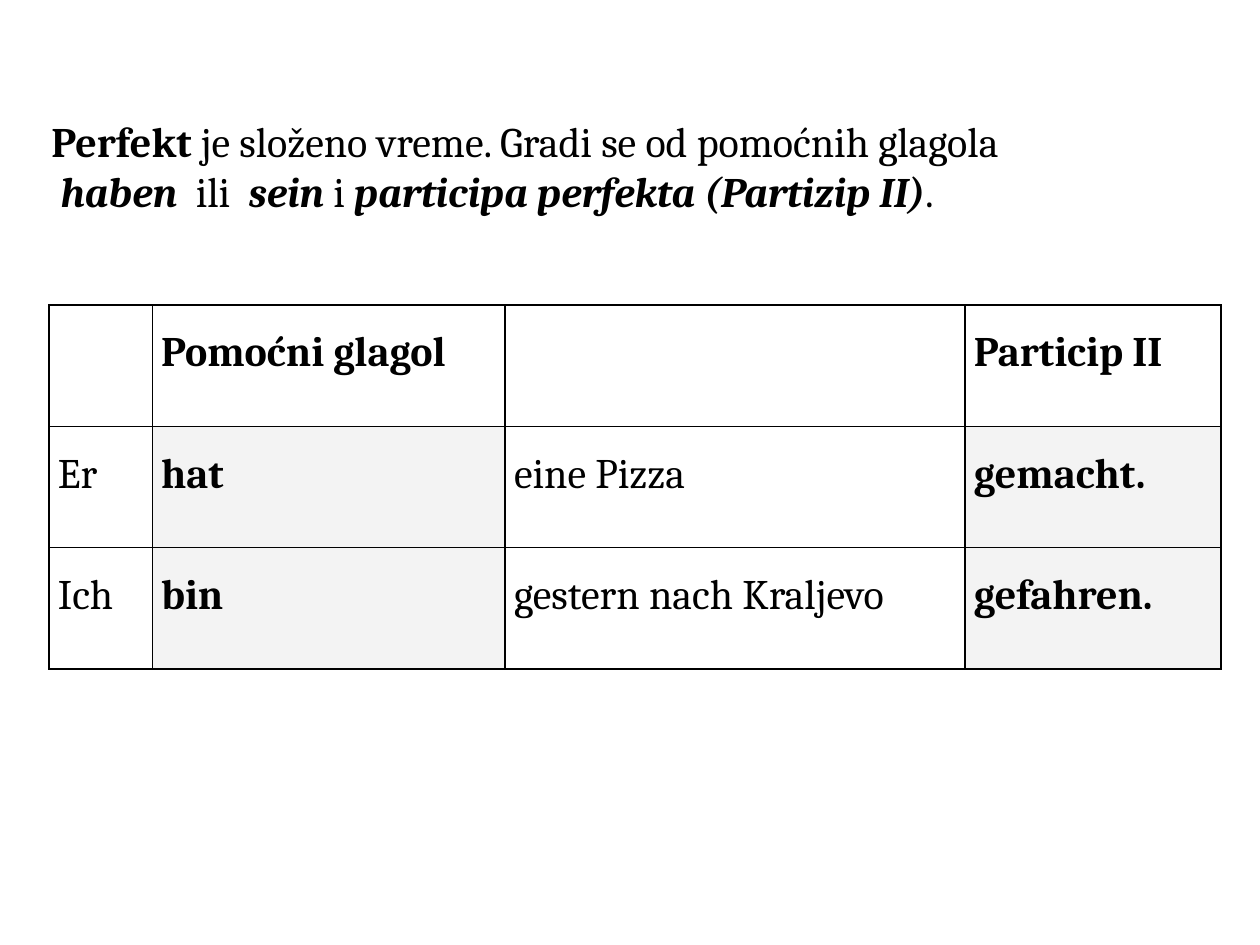
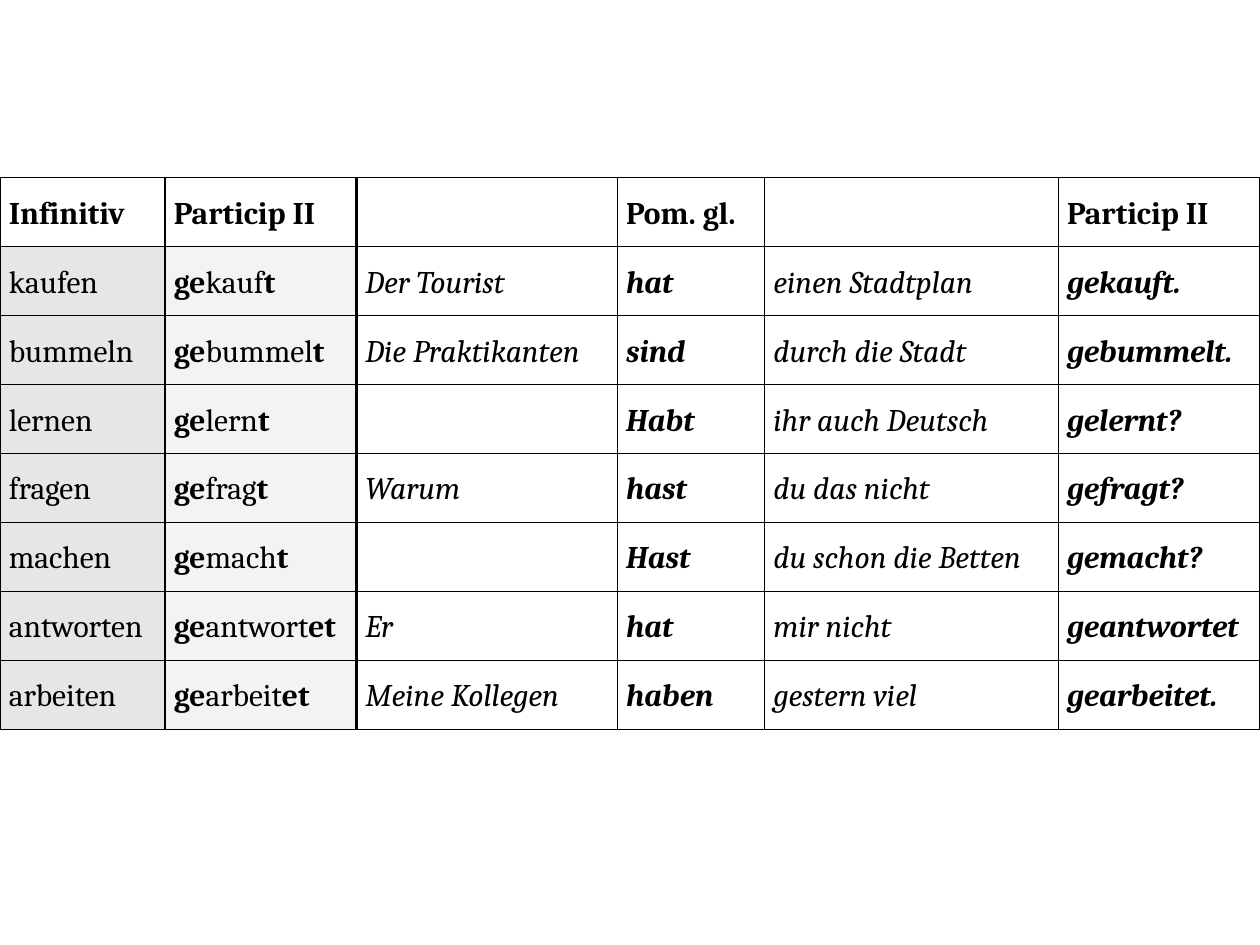
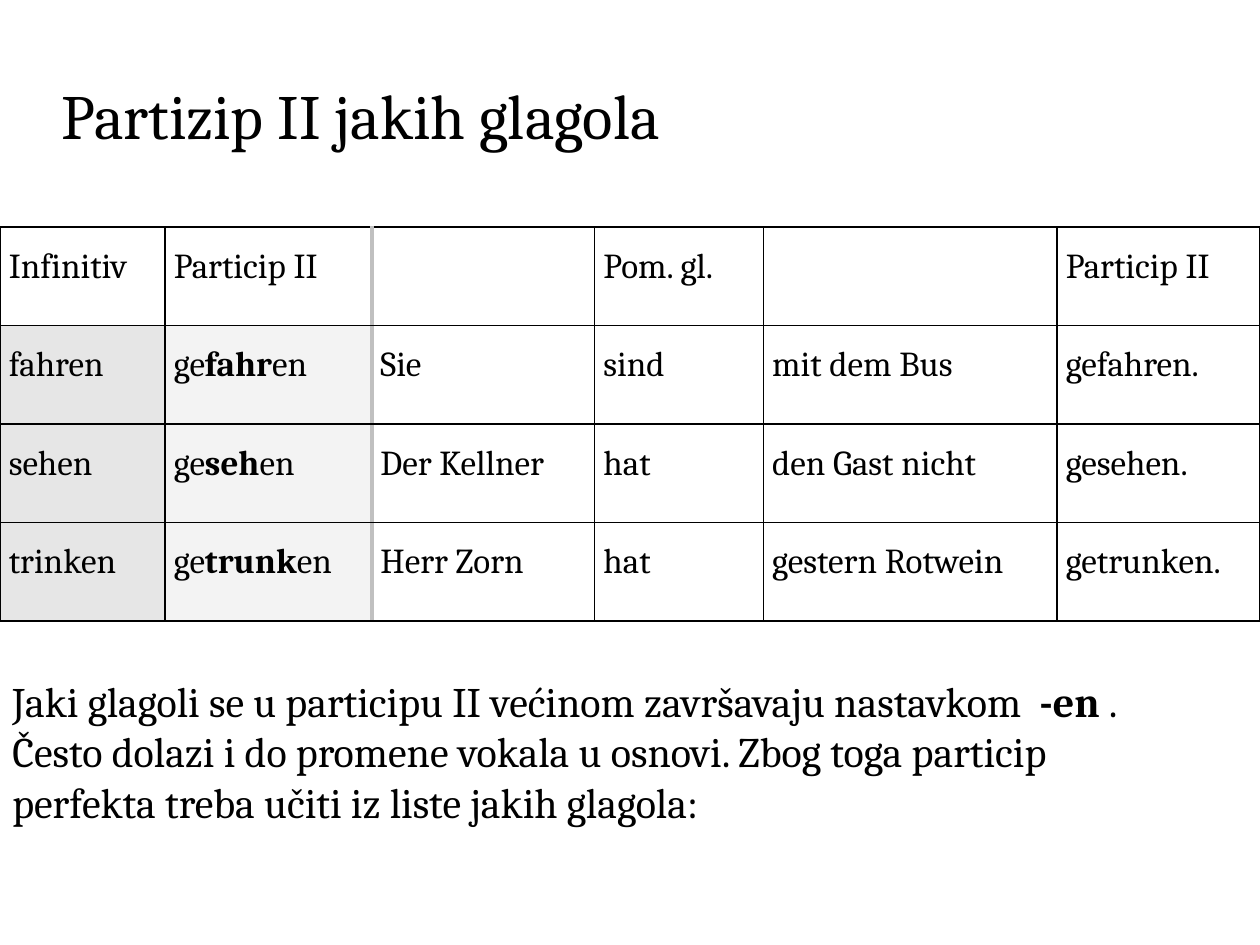
from dataclasses import dataclass
from typing import NamedTuple

import lxml.etree
import pptx
import pptx.dml.color
import pptx.enum.text
import pptx.oxml.ns
import pptx.presentation
import pptx.slide
import pptx.table
import pptx.text.text
import pptx.util


@dataclass(frozen=True)
class Theme:
    font: str = "Cambria"
    ink: str = "000000"
    stem_fill: str = "E6E6E6"
    form_fill: str = "F3F3F3"
    soft_line: str = "C0C0C0"
    title_size: int = 36
    body_size: int = 24
    strong_table_size: int = 20
    weak_table_size: int = 18
    line_spacing: float = 1.5
    cell_margin: float = 0.07
    thin: float = 1
    thick: float = 2.5


THEME = Theme()
SLIDE_WIDTH = pptx.util.Inches(10)
SLIDE_HEIGHT = pptx.util.Inches(7.5)
TITLE_ONLY_LAYOUT, BLANK_LAYOUT = 5, 6


class Box(NamedTuple):
    """A rectangle in percent of the slide's width and height."""
    left: float
    top: float
    width: float
    height: float

    def lengths(self) -> tuple[int, int, int, int]:
        return across(self.left), down(self.top), across(self.width), down(self.height)


class Column(NamedTuple):
    width: float  # percent of the slide's width
    bold: bool = False
    italic: bool = False
    fill: str | None = None


class Divider(NamedTuple):
    """The heavy rule to the right of one column."""
    column: int
    color: str


@dataclass(frozen=True)
class GrammarTable:
    left: float
    top: float
    row_height: float
    size: int
    columns: tuple[Column, ...]
    rows: tuple[tuple[str, ...], ...]  # bold parts stand between asterisks
    bold_header: bool = True
    divider: Divider | None = None


AUXILIARY_TABLE = GrammarTable(
    left=3.9, top=32.27, row_height=12.85, size=THEME.body_size,
    columns=(Column(8.2), Column(28, bold=True, fill=THEME.form_fill),
             Column(36.5), Column(20.3, bold=True, fill=THEME.form_fill)),
    rows=(
        ("", "Pomoćni glagol", "", "Particip II"),
        ("Er", "hat", "eine Pizza", "gemacht."),
        ("Ich", "bin", "gestern nach Kraljevo", "gefahren."),
    ),
)

WEAK_VERBS_TABLE = GrammarTable(
    left=0, top=18.8, row_height=7.3, size=THEME.weak_table_size,
    columns=(Column(13.1, fill=THEME.stem_fill), Column(15.2, fill=THEME.form_fill),
             Column(20.7, italic=True), Column(11.7, bold=True, italic=True),
             Column(23.3, italic=True), Column(16, bold=True, italic=True)),
    rows=(
        ("Infinitiv", "Particip II", "", "Pom. gl.", "", "Particip II"),
        ("kaufen", "*ge*kauf*t*", "Der Tourist", "hat", "einen Stadtplan", "gekauft."),
        ("bummeln", "*ge*bummel*t*", "Die Praktikanten", "sind", "durch die Stadt", "gebummelt."),
        ("lernen", "*ge*lern*t*", "", "Habt", "ihr auch Deutsch", "gelernt?"),
        ("fragen", "*ge*frag*t*", "Warum", "hast", "du das nicht", "gefragt?"),
        ("machen", "*ge*mach*t*", "", "Hast", "du schon die Betten", "gemacht?"),
        ("antworten", "*ge*antwort*et*", "Er", "hat", "mir nicht", "geantwortet"),
        ("arbeiten", "*ge*arbeit*et*", "Meine Kollegen", "haben", "gestern viel", "gearbeitet."),
    ),
    divider=Divider(1, THEME.ink),
)

STRONG_VERBS_TABLE = GrammarTable(
    left=0, top=24, row_height=10.43, size=THEME.strong_table_size,
    columns=(Column(13.1, fill=THEME.stem_fill), Column(16.4, fill=THEME.form_fill),
             Column(17.7), Column(13.4), Column(23.3), Column(16.1)),
    rows=(
        ("Infinitiv", "Particip II", "", "Pom. gl.", "", "Particip II"),
        ("fahren", "ge*fahr*en", "Sie", "sind", "mit dem Bus", "gefahren."),
        ("sehen", "ge*seh*en", "Der Kellner", "hat", "den Gast nicht", "gesehen."),
        ("trinken", "ge*trunk*en", "Herr Zorn", "hat", "gestern Rotwein", "getrunken."),
    ),
    bold_header=False,
    divider=Divider(1, THEME.soft_line),
)


def across(percent: float) -> int:
    return round(SLIDE_WIDTH * percent / 100)


def down(percent: float) -> int:
    return round(SLIDE_HEIGHT * percent / 100)


def rgb(color: str) -> pptx.dml.color.RGBColor:
    return pptx.dml.color.RGBColor.from_string(color)


def write(paragraph: pptx.text.text._Paragraph, text: str, size: int, bold: bool = False,
          italic: bool = False, italic_emphasis: bool = False) -> None:
    """Fill a paragraph; parts between asterisks become bold runs."""
    font = paragraph.font
    font.name, font.size = THEME.font, pptx.util.Pt(size)
    font.bold, font.italic = bold, italic
    font.color.rgb = rgb(THEME.ink)
    for index, part in enumerate(text.split("*")):
        if not part:
            continue
        run = paragraph.add_run()
        run.text = part
        if index % 2:
            run.font.bold = True
            if italic_emphasis:
                run.font.italic = True


def add_text(slide: pptx.slide.Slide, box: Box, lines: tuple[str, ...],
             anchor: pptx.enum.text.MSO_ANCHOR, italic_emphasis: bool = False) -> None:
    frame = slide.shapes.add_textbox(*box.lengths()).text_frame
    frame.word_wrap = True
    frame.auto_size = pptx.enum.text.MSO_AUTO_SIZE.SHAPE_TO_FIT_TEXT
    frame.vertical_anchor = anchor
    for index, line in enumerate(lines):
        paragraph = frame.add_paragraph() if index else frame.paragraphs[0]
        write(paragraph, line, THEME.body_size, italic_emphasis=italic_emphasis)


def set_title(slide: pptx.slide.Slide, box: Box, text: str) -> None:
    title = slide.shapes.title
    title.left, title.top, title.width, title.height = box.lengths()
    frame = title.text_frame
    frame.word_wrap = False
    frame.auto_size = pptx.enum.text.MSO_AUTO_SIZE.SHAPE_TO_FIT_TEXT
    frame.vertical_anchor = pptx.enum.text.MSO_ANCHOR.MIDDLE
    frame.paragraphs[0].alignment = pptx.enum.text.PP_ALIGN.LEFT
    write(frame.paragraphs[0], text, THEME.title_size)


def set_borders(cell: pptx.table._Cell, column: int, divider: Divider | None) -> None:
    heavy_sides = {divider.column: "R", divider.column + 1: "L"} if divider else {}
    properties = cell._tc.get_or_add_tcPr()
    for side in "LRTB":
        heavy = heavy_sides.get(column) == side
        width = pptx.util.Pt(THEME.thick if heavy else THEME.thin)
        line = lxml.etree.SubElement(properties, pptx.oxml.ns.qn(f"a:ln{side}"), w=str(width))
        fill = lxml.etree.SubElement(line, pptx.oxml.ns.qn("a:solidFill"))
        lxml.etree.SubElement(fill, pptx.oxml.ns.qn("a:srgbClr"),
                              val=divider.color if heavy else THEME.ink)


def add_grammar_table(slide: pptx.slide.Slide, spec_table: GrammarTable) -> None:
    rows, columns = spec_table.rows, spec_table.columns
    box = Box(spec_table.left, spec_table.top, sum(column.width for column in columns),
              spec_table.row_height * len(rows))
    table = slide.shapes.add_table(len(rows), len(columns), *box.lengths()).table
    table.first_row = table.horz_banding = False
    for index, column in enumerate(columns):
        table.columns[index].width = across(column.width)
    for row_index, texts in enumerate(rows):
        table.rows[row_index].height = down(spec_table.row_height)
        header = row_index == 0
        for column_index, (column, text) in enumerate(zip(columns, texts)):
            cell = table.cell(row_index, column_index)
            cell.margin_left = cell.margin_right = pptx.util.Inches(THEME.cell_margin)
            cell.margin_top = cell.margin_bottom = 0
            set_borders(cell, column_index, spec_table.divider)
            if column.fill and not header:
                cell.fill.solid()
                cell.fill.fore_color.rgb = rgb(column.fill)
            else:
                cell.fill.background()
            paragraph = cell.text_frame.paragraphs[0]
            paragraph.line_spacing = THEME.line_spacing
            write(paragraph, text, spec_table.size,
                  bold=spec_table.bold_header if header else column.bold,
                  italic=column.italic and not header)


def add_slide(presentation: pptx.presentation.Presentation, layout: int) -> pptx.slide.Slide:
    return presentation.slides.add_slide(presentation.slide_layouts[layout])


def main() -> None:
    presentation = pptx.Presentation()
    presentation.slide_width, presentation.slide_height = SLIDE_WIDTH, SLIDE_HEIGHT

    perfect = add_slide(presentation, BLANK_LAYOUT)
    add_text(perfect, Box(3.1, 11.47, 92.2, 12.13),
             ("*Perfekt* je složeno vreme. Gradi se od pomoćnih glagola",
              " *haben * ili  *sein* i *participa perfekta (Partizip II)*."),
             pptx.enum.text.MSO_ANCHOR.MIDDLE, italic_emphasis=True)
    # The tense's own name is upright, unlike the other emphasised words.
    perfect.shapes[0].text_frame.paragraphs[0].runs[0].font.italic = False
    add_grammar_table(perfect, AUXILIARY_TABLE)

    weak_verbs = add_slide(presentation, BLANK_LAYOUT)
    add_grammar_table(weak_verbs, WEAK_VERBS_TABLE)

    strong_verbs = add_slide(presentation, TITLE_ONLY_LAYOUT)
    set_title(strong_verbs, Box(3.9, 7.33, 51.5, 9.47), "Partizip II jakih glagola")
    add_grammar_table(strong_verbs, STRONG_VERBS_TABLE)
    add_text(strong_verbs, Box(0, 70.8, 95.3, 17.47),
             ("Jaki glagoli se u participu II većinom završavaju nastavkom  *-en* . "
              "Često dolazi i do promene vokala u osnovi. Zbog toga particip perfekta "
              "treba učiti iz liste jakih glagola:",),
             pptx.enum.text.MSO_ANCHOR.TOP)

    presentation.save("out.pptx")


if __name__ == "__main__":
    main()
